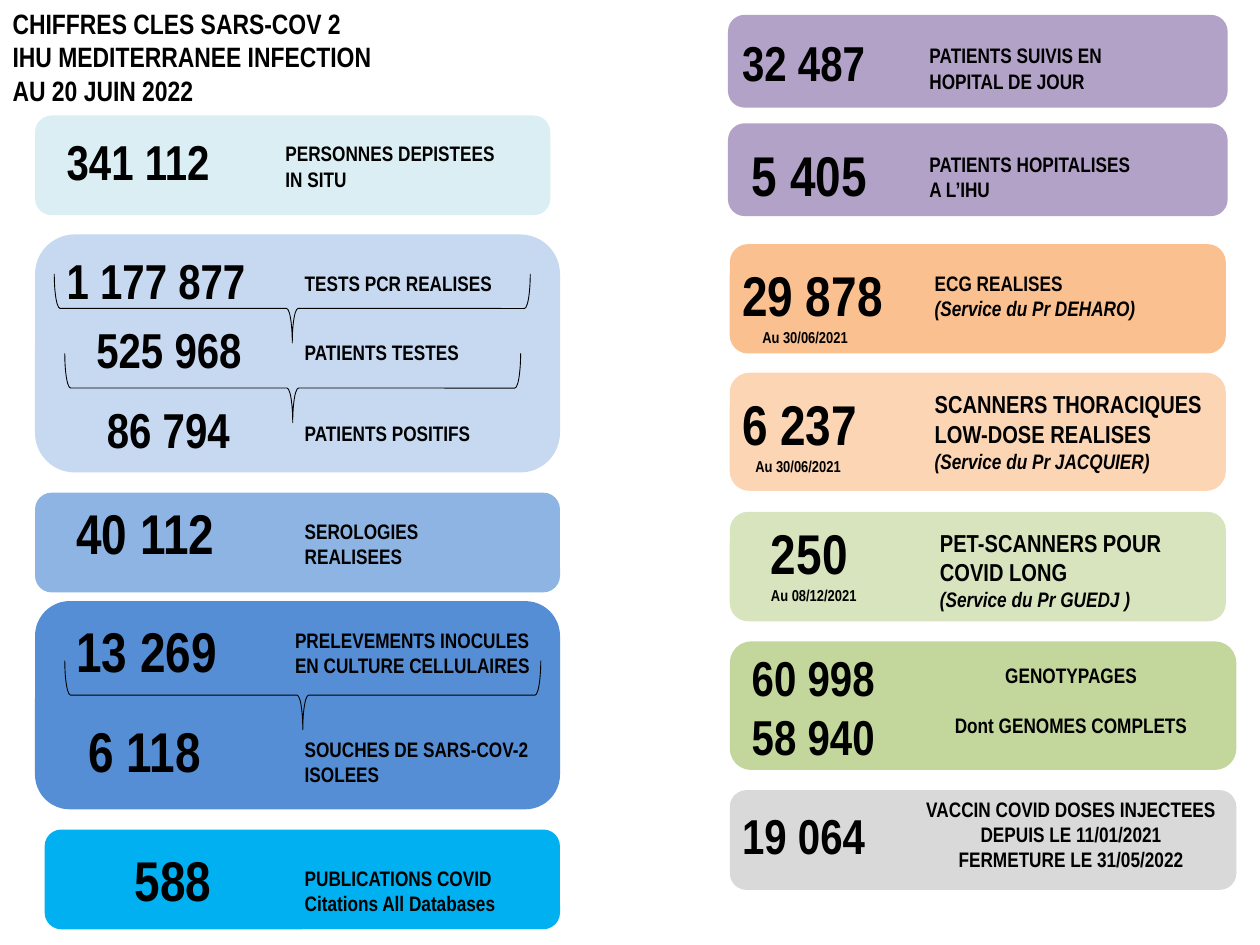
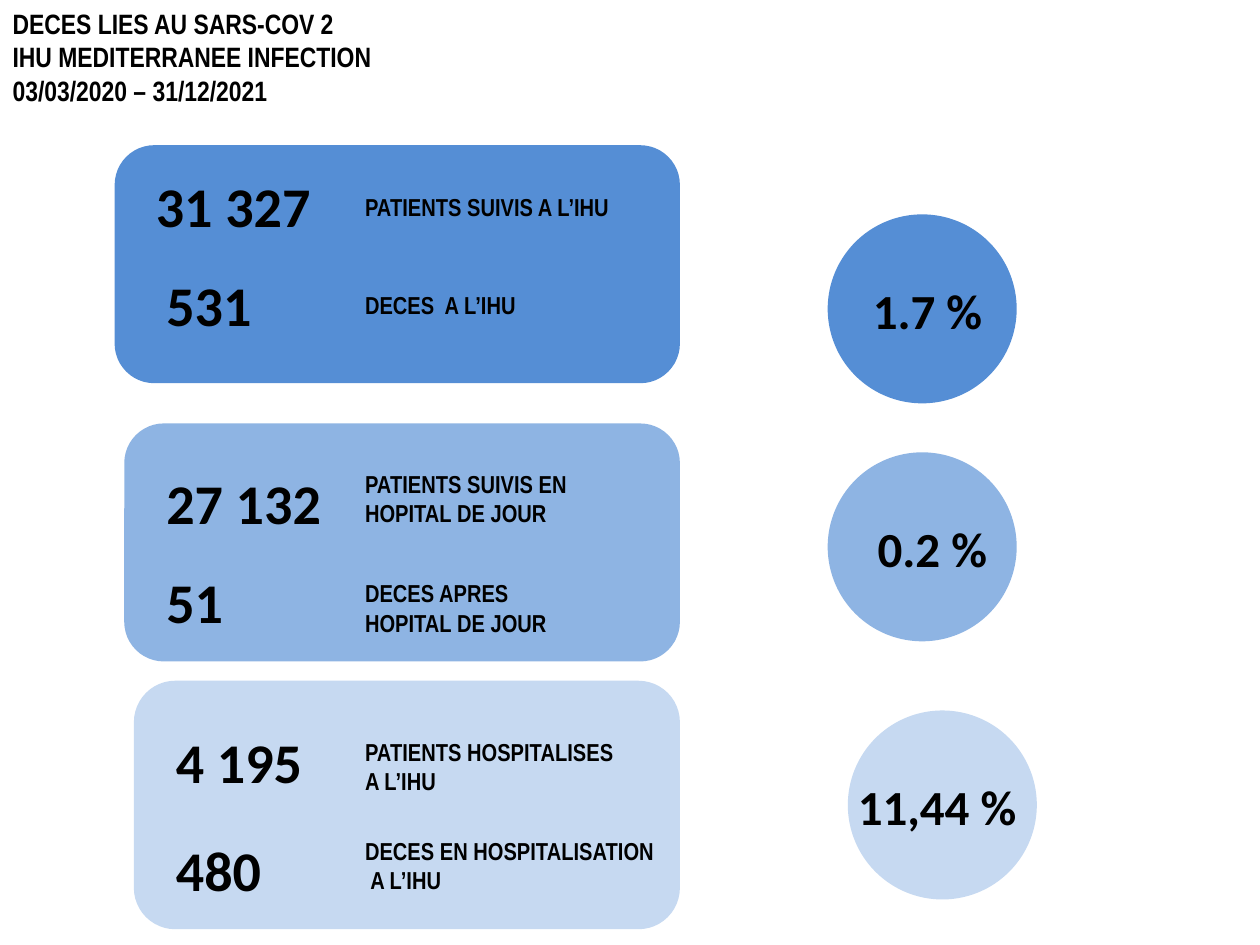
from dataclasses import dataclass

from pptx import Presentation
from pptx.dml.color import RGBColor
from pptx.enum import shapes, text
from pptx.util import Pt


@dataclass(frozen=True)
class Theme:
    narrow: str = "Arial Narrow"
    round: str = "Calibri"
    ink: str = "000000"
    ice: str = "DBEEF4"
    pale_blue: str = "C6D9F1"
    mid_blue: str = "8EB4E3"
    deep_blue: str = "558ED5"
    cyan: str = "00B0F0"
    purple: str = "B3A2C7"
    orange: str = "FAC090"
    peach: str = "FCD5B5"
    pale_green: str = "D7E4BD"
    green: str = "C3D69B"
    grey: str = "D9D9D9"
    title: int = 16
    label: int = 12
    large_label: int = 14
    figure: int = 28
    large_figure: int = 32
    date: int = 9


THEME = Theme()
LEFT = text.PP_ALIGN.LEFT
CENTER = text.PP_ALIGN.CENTER


def rgb(value):
    return RGBColor.from_string(value)


def format_paragraph(paragraph, size, font=THEME.narrow, align=LEFT, italic=False):
    paragraph.alignment = align
    for run in paragraph.runs:
        run.font.name = font
        run.font.size = Pt(size)
        run.font.bold = True
        run.font.italic = italic
        run.font.color.rgb = rgb(THEME.ink)


def indent_paragraph(paragraph, indent):
    properties = paragraph._p.get_or_add_pPr()
    properties.set("marL", str(Pt(indent)))
    properties.set("indent", "0")


def add_text(slide, left, top, width, lines, size, font=THEME.narrow, align=LEFT):
    """Add a text box, one paragraph for each line of the given text."""
    height = 1.2 * size * len(lines.split("\n")) + 7.2
    box = slide.shapes.add_textbox(Pt(left), Pt(top), Pt(width), Pt(height))
    frame = box.text_frame
    frame.word_wrap = True
    frame.text = lines
    for paragraph in frame.paragraphs:
        format_paragraph(paragraph, size, font, align)
    return frame


def add_line(frame, line, size, indent=0, italic=False):
    """Append a paragraph in a style of its own under the main text."""
    paragraph = frame.add_paragraph()
    paragraph.text = line
    if indent:
        indent_paragraph(paragraph, indent)
    format_paragraph(paragraph, size, italic=italic)


def add_filled_shape(slide, kind, left, top, width, height, color, outline=0):
    shape = slide.shapes.add_shape(kind, Pt(left), Pt(top), Pt(width), Pt(height))
    shape.shadow.inherit = False
    shape.fill.solid()
    shape.fill.fore_color.rgb = rgb(color)
    if outline:
        shape.line.color.rgb = rgb(color)
        shape.line.width = Pt(outline)
    else:
        shape.line.fill.background()


def add_card(slide, *place_and_color, outline=0):
    kind = shapes.MSO_SHAPE.ROUNDED_RECTANGLE
    add_filled_shape(slide, kind, *place_and_color, outline)


def add_brace(slide, left, top, width):
    """Add a brace that spans the width and points down."""
    depth = 39.5
    shape = slide.shapes.add_shape(
        shapes.MSO_SHAPE.RIGHT_BRACE,
        Pt(left + (width - depth) / 2), Pt(top - (width - depth) / 2),
        Pt(depth), Pt(width))
    shape.rotation = 90
    shape.shadow.inherit = False
    shape.fill.background()
    shape.line.color.rgb = rgb(THEME.ink)
    shape.line.width = Pt(0.5)


def add_titled_slide(presentation, title):
    slide = presentation.slides.add_slide(presentation.slide_layouts[5])
    shape = slide.shapes.title
    shape.left, shape.top, shape.width, shape.height = Pt(0), Pt(0), Pt(400), Pt(65.5)
    frame = shape.text_frame
    frame.text = title
    frame.word_wrap = True
    frame.auto_size = text.MSO_AUTO_SIZE.NONE
    frame.vertical_anchor = text.MSO_ANCHOR.TOP
    for paragraph in frame.paragraphs:
        format_paragraph(paragraph, THEME.title)
    return slide


def add_screening_column(slide):
    for card in (
        (20, 66, 294.5, 57, THEME.ice),
        (20, 134, 300, 136, THEME.pale_blue),
        (20, 281.5, 300, 57, THEME.mid_blue),
        (20, 343.5, 300, 119, THEME.deep_blue),
        (25.5, 474, 294.5, 57, THEME.cyan),
    ):
        add_card(slide, *card)

    for left, top, width in ((31, 156.5, 272), (37, 202, 260.5), (37, 377.5, 272)):
        add_brace(slide, left, top, width)

    for left, top, figure, size in (
        (31, 71.5, "341 112", THEME.figure),
        (31, 139.5, "1 177 877", THEME.figure),
        (48, 179, "525 968", THEME.figure),
        (54, 224.5, "86 794", THEME.figure),
        (36.5, 281.5, "40 112", THEME.large_figure),
        (36.5, 349, "13 269", THEME.large_figure),
        (43.5, 406, "6 118", THEME.large_figure),
    ):
        add_text(slide, left, top, 125, figure, size)
    add_text(slide, 36.5, 479.5, 125, "588", THEME.large_figure, align=CENTER)

    for left, top, label in (
        (156, 77, "PERSONNES DEPISTEES\nIN SITU"),
        (167, 151, "TESTS PCR REALISES"),
        (167, 190.5, "PATIENTS TESTES"),
        (167, 236.5, "PATIENTS POSITIFS"),
        (167, 292.5, "SEROLOGIES\nREALISEES"),
        (161.5, 355, "PRELEVEMENTS INOCULES\nEN CULTURE CELLULAIRES"),
        (167, 417.5, "SOUCHES DE SARS-COV-2\nISOLEES"),
        (167, 491, "PUBLICATIONS COVID\nCitations All Databases"),
    ):
        add_text(slide, left, top, 165, label, THEME.label)


def add_care_column(slide):
    for top in (9.5, 71.5):
        add_card(slide, 417, top, 283.5, 51, THEME.purple, outline=2)
    for top, width, height, color in (
        (139.5, 283.5, 62.5, THEME.orange),
        (213, 283.5, 67.5, THEME.peach),
        (292.5, 283.5, 62.5, THEME.pale_green),
        (366.5, 289.5, 73.5, THEME.green),
        (451.5, 289.5, 57, THEME.grey),
    ):
        add_card(slide, 417, top, width, height, color)

    for left, top, figure, size in (
        (417, 15, "32 487", THEME.figure),
        (422.5, 77, "5 405", THEME.large_figure),
        (422.5, 366.5, "60 998\n58 940", THEME.figure),
        (417, 457, "19 064", THEME.figure),
    ):
        add_text(slide, left, top, 105, figure, size)

    for left, top, figure, date, indent in (
        (417, 145.5, "29 878", "Au 30/06/2021", 11.5),
        (417, 219, "6 237", "Au 30/06/2021", 7.5),
        (433.5, 292.5, "250", "Au 08/12/2021", 0),
    ):
        frame = add_text(slide, left, top, 105, figure, THEME.large_figure)
        add_line(frame, date, THEME.date, indent)

    for top, label in (
        (21, "PATIENTS SUIVIS EN\nHOPITAL DE JOUR"),
        (83, "PATIENTS HOPITALISES\nA L’IHU"),
    ):
        add_text(slide, 524, top, 170, label, THEME.label)

    for left, top, label, size, service in (
        (527, 151, "ECG REALISES", THEME.label, "(Service du Pr DEHARO)"),
        (527, 219, "SCANNERS THORACIQUES\nLOW-DOSE REALISES",
         THEME.large_label, "(Service du Pr JACQUIER)"),
        (530, 298, "PET-SCANNERS POUR\nCOVID LONG",
         THEME.large_label, "(Service du Pr GUEDJ )"),
    ):
        frame = add_text(slide, left, top, 190, label, size)
        add_line(frame, service, THEME.label, italic=True)

    genotypes = add_text(slide, 518.5, 375, 187, "GENOTYPAGES\nDont GENOMES COMPLETS",
                         THEME.label, align=CENTER)
    genotypes.paragraphs[1].space_before = Pt(14.5)
    add_text(slide, 518.5, 451.5, 187,
             "VACCIN COVID DOSES INJECTEES DEPUIS LE 11/01/2021\nFERMETURE LE 31/05/2022",
             THEME.label, align=CENTER)


def add_key_figures_slide(presentation):
    slide = add_titled_slide(
        presentation,
        "CHIFFRES CLES SARS-COV 2\nIHU MEDITERRANEE INFECTION\nAU 20 JUIN 2022")
    add_screening_column(slide)
    add_care_column(slide)


def add_deaths_slide(presentation):
    slide = add_titled_slide(
        presentation,
        "DECES LIES AU SARS-COV 2\nIHU MEDITERRANEE INFECTION\n03/03/2020 – 31/12/2021")
    card_right = 388.5
    for left, top, height, color in (
        (65.5, 83, 136, THEME.deep_blue),
        (71, 242, 136, THEME.mid_blue),
        (76.5, 389, 142, THEME.pale_blue),
    ):
        add_card(slide, left, top, card_right - left, height, color)

    for left, top, figure in (
        (82, 94.5, "31 327"), (88, 151, "531"),
        (88, 264, "27 132"), (88, 321, "51"),
        (93.5, 412, "4 195"), (93.5, 474, "480"),
    ):
        add_text(slide, left, top, 108, figure, THEME.large_figure, THEME.round)

    for top, label in (
        (106, "PATIENTS SUIVIS A L’IHU"),
        (162, "DECES  A L’IHU"),
        (264.5, "PATIENTS SUIVIS EN\nHOPITAL DE JOUR"),
        (327, "DECES APRES\nHOPITAL DE JOUR"),
        (417.5, "PATIENTS HOSPITALISES\nA L’IHU"),
    ):
        add_text(slide, 201.5, top, 181.5, label, THEME.large_label)
    frame = add_text(slide, 201.5, 474, 181.5, "DECES EN HOSPITALISATION", THEME.large_label)
    add_line(frame, "A L’IHU", THEME.large_label, indent=3)

    for left, top, color, text_left, text_width, rate in (
        (473, 122.5, THEME.deep_blue, 484.5, 91, "1.7 %"),
        (473, 258.5, THEME.mid_blue, 484.5, 96.5, "0.2 %"),
        (484.5, 406, THEME.pale_blue, 479, 113, "11,44 %"),
    ):
        add_filled_shape(slide, shapes.MSO_SHAPE.OVAL, left, top, 108, 108, color)
        add_text(slide, text_left, top + 34, text_width, rate,
                 THEME.figure, THEME.round, CENTER)


def main():
    presentation = Presentation()
    presentation.slide_width = Pt(720)
    presentation.slide_height = Pt(540)
    add_key_figures_slide(presentation)
    add_deaths_slide(presentation)
    presentation.save("out.pptx")


if __name__ == "__main__":
    main()
